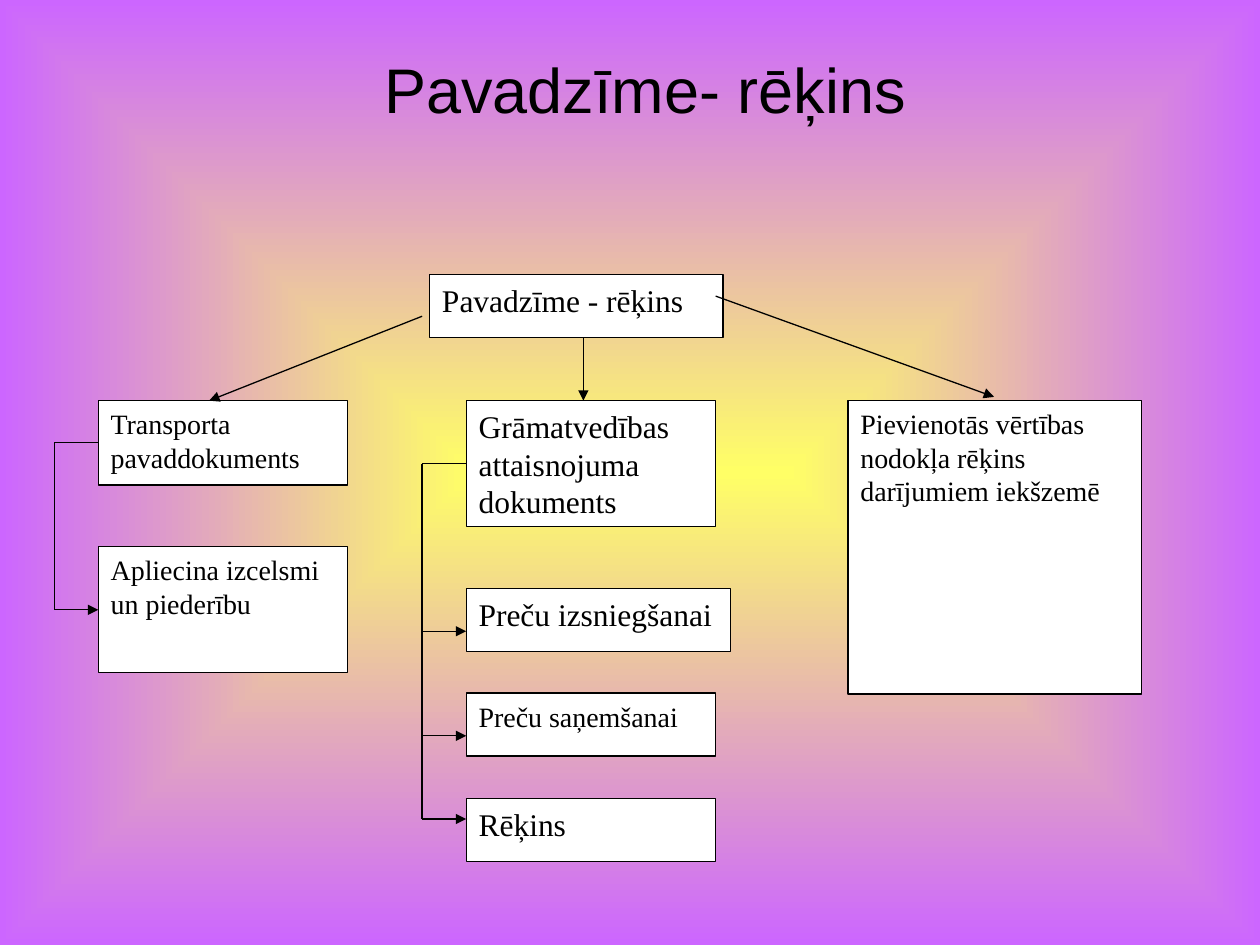
import lxml.etree
import pptx
import pptx.dml.color
import pptx.enum.shapes
import pptx.enum.text
import pptx.oxml.ns
import pptx.util
from pptx.util import Inches

COLORS = {"center": "FFFF66", "edge": "CC66FF", "box": "FFFFFF", "ink": "000000"}
TITLE = "Pavadzīme- rēķins"

# Columns, rows and box sizes, in inches
LEFT, MIDDLE, RIGHT = 0.78, 3.7, 6.73
ROW = 3.18
NARROW, WIDE, LOW = 1.98, 2.33, 0.5

# Text, size in points, left, top, width, height
BOXES = [
    ("Pavadzīme - rēķins", 18, 3.41, 2.18, WIDE, LOW),
    ("Transporta pavaddokuments", 16, LEFT, ROW, NARROW, 0.67),
    ("Grāmatvedības attaisnojuma dokuments", 18, MIDDLE, ROW, NARROW, 1),
    ("Pievienotās vērtības nodokļa rēķins darījumiem iekšzemē", 16, RIGHT, ROW, WIDE, 2.33),
    ("Preču izsniegšanai", 18, MIDDLE, 4.67, 2.1, LOW),
    ("Preču saņemšanai", 16, MIDDLE, 5.5, NARROW, LOW),
    ("Rēķins", 18, MIDDLE, 6.34, NARROW, LOW),
    ("Apliecina izcelsmi un piederību", 16, LEFT, 4.34, NARROW, 1),
]

# Arrows from the top box to the three columns: start x, y, end x, y
BRANCHES = [
    (4.63, 2.68, 4.63, ROW),
    (3.35, 2.51, 1.66, ROW),
    (5.68, 2.35, 7.89, 3.15),
]

# Brackets beside a column: column left, start height, arrow heights
BRACKETS = [
    (MIDDLE, 3.68, [5.01, 5.84, 6.5]),
    (LEFT, 3.51, [4.84]),
]
BRACKET_DEPTH = 0.35


def rgb(name):
    return pptx.dml.color.RGBColor.from_string(COLORS[name])


def apply(target, values):
    for name, value in values.items():
        setattr(target, name, value)


def add_xml(parent, tag, **attributes):
    return lxml.etree.SubElement(parent, pptx.oxml.ns.qn(tag), attributes)


def write(shape, text, font_name, size, top_inset=0.05):
    frame = shape.text_frame
    apply(frame, {
        "word_wrap": True,
        "auto_size": pptx.enum.text.MSO_AUTO_SIZE.NONE,
        "vertical_anchor": pptx.enum.text.MSO_ANCHOR.TOP,
        "margin_top": Inches(top_inset),
    })
    paragraph = frame.paragraphs[0]
    paragraph.alignment = pptx.enum.text.PP_ALIGN.LEFT
    run = paragraph.add_run()
    run.text = text
    apply(run.font, {"name": font_name, "size": pptx.util.Pt(size)})
    run.font.color.rgb = rgb("ink")


def style_line(line):
    line.color.rgb = rgb("ink")
    line.width = pptx.util.Pt(0.75)


def add_line(slide, start_x, start_y, end_x, end_y, arrow=False):
    connector = slide.shapes.add_connector(
        pptx.enum.shapes.MSO_CONNECTOR.STRAIGHT,
        *map(Inches, (start_x, start_y, end_x, end_y)))
    style_line(connector.line)
    properties = connector._element.spPr
    if arrow:
        outline = properties.find(pptx.oxml.ns.qn("a:ln"))
        add_xml(outline, "a:tailEnd", type="triangle")
    add_xml(properties, "a:effectLst")


def paint_background(slide):
    fill = slide.background.fill
    fill.gradient()
    for stop, name, position in zip(fill.gradient_stops, ("center", "edge"), (0, 1)):
        stop.color.rgb = rgb(name)
        stop.position = position
    # Radiate from the middle of the slide
    linear = slide._element.find(".//" + pptx.oxml.ns.qn("a:lin"))
    gradient = linear.getparent()
    gradient.remove(linear)
    radial = add_xml(gradient, "a:path", path="shape")
    add_xml(radial, "a:fillToRect", l="50000", t="50000", r="50000", b="50000")


def main():
    presentation = pptx.Presentation()
    apply(presentation, {"slide_width": Inches(10), "slide_height": Inches(7.5)})
    slide = presentation.slides.add_slide(presentation.slide_layouts.get_by_name("Title Only"))
    paint_background(slide)

    # Title
    title = slide.shapes.title
    apply(title, {"left": Inches(2.95), "top": Inches(0.28),
                  "width": Inches(4.96), "height": Inches(0.7)})
    write(title, TITLE, "Arial", 36, top_inset=0.12)

    # Boxes
    for text, size, *place in BOXES:
        box = slide.shapes.add_shape(
            pptx.enum.shapes.MSO_SHAPE.RECTANGLE, *map(Inches, place))
        box.shadow.inherit = False
        box.fill.solid()
        box.fill.fore_color.rgb = rgb("box")
        style_line(box.line)
        write(box, text, "Times New Roman", size)

    # Branches and brackets
    for branch in BRANCHES:
        add_line(slide, *branch, arrow=True)
    for column, start, arrow_heights in BRACKETS:
        spine = column - BRACKET_DEPTH
        add_line(slide, column, start, spine, start)
        add_line(slide, spine, start, spine, arrow_heights[-1])
        for height in arrow_heights:
            add_line(slide, spine, height, column, height, arrow=True)

    presentation.save("out.pptx")


if __name__ == "__main__":
    main()
